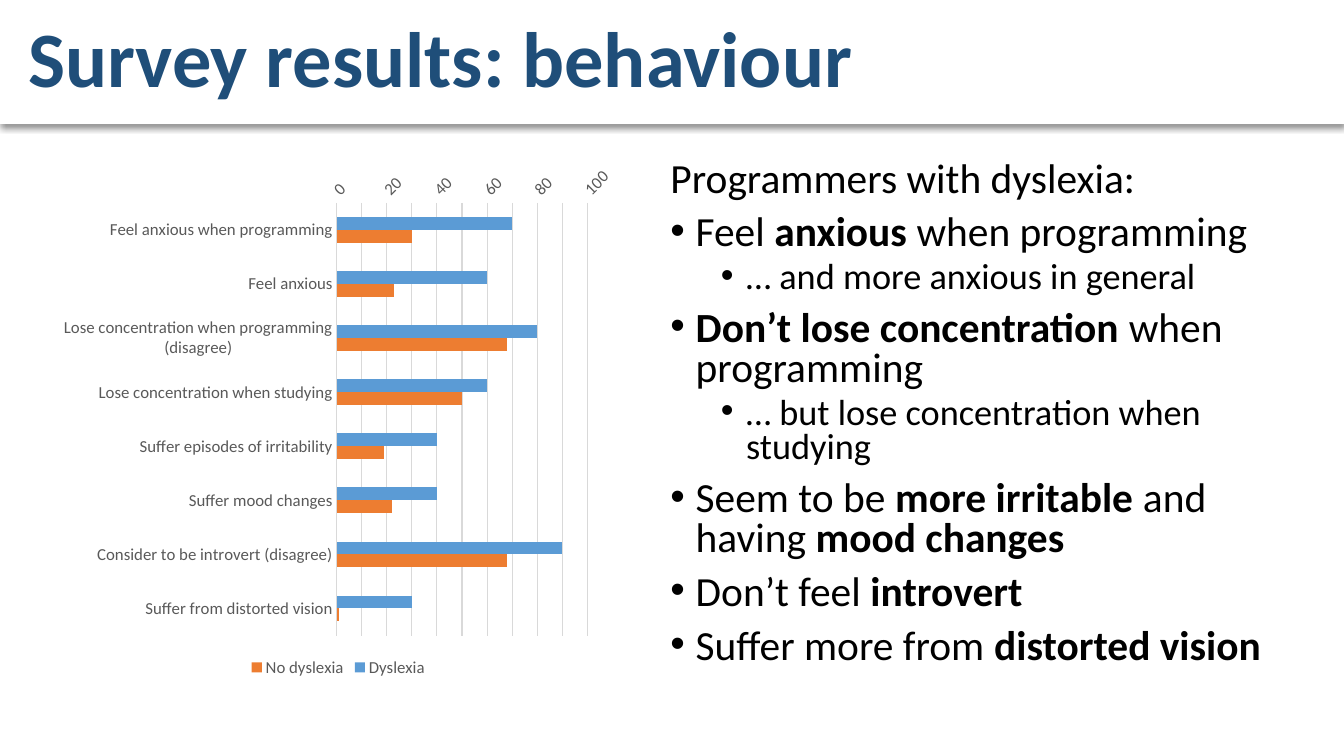
import pptx
import pptx.chart.data
import pptx.dml.color
import pptx.enum.chart
import pptx.enum.shapes
import pptx.enum.text
import pptx.oxml
import pptx.oxml.ns
import pptx.util
from lxml import etree

RGBColor = pptx.dml.color.RGBColor
Inches = pptx.util.Inches
Pt = pptx.util.Pt

WHITE = RGBColor(0xFF, 0xFF, 0xFF)
BLACK = RGBColor(0x00, 0x00, 0x00)
NAVY = RGBColor(0x1F, 0x4E, 0x79)
GREY = RGBColor(0x59, 0x59, 0x59)
PALE_GREY = RGBColor(0xD9, 0xD9, 0xD9)
BLUE = RGBColor(0x5B, 0x9B, 0xD5)
ORANGE = RGBColor(0xED, 0x7D, 0x31)

FONT = "Calibri"
SLIDE_WIDTH, SLIDE_HEIGHT = Inches(13.33), Inches(7.5)
BAND_HEIGHT = Inches(1.23)
CONTENT_TOP, CONTENT_HEIGHT = Inches(1.55), Inches(5.21)

CATEGORIES = [
    "Feel anxious when programming",
    "Feel anxious",
    "Lose concentration when programming (disagree)",
    "Lose concentration when studying",
    "Suffer episodes of irritability",
    "Suffer mood changes",
    "Consider to be introvert (disagree)",
    "Suffer from distorted vision",
]
SERIES = [
    ("Dyslexia", [70, 60, 80, 60, 40, 40, 90, 30], BLUE),
    ("No dyslexia", [30, 23, 68, 50, 19, 22, 68, 1], ORANGE),
]

LEAD, POINT, DETAIL = "lead", "point", "detail"
STYLES = {
    LEAD: (0, 0, 0, 29.6, 0),
    POINT: (0, 0.25, -0.25, 29.6, 10),
    DETAIL: (1, 0.75, -0.25, 25.9, 5),
}
FINDINGS = [
    (LEAD, [("Programmers with dyslexia:", False)]),
    (POINT, [("Feel ", False), ("anxious ", True), ("when programming", False)]),
    (DETAIL, [("… and more anxious in general", False)]),
    (POINT, [("Don’t lose concentration ", True), ("when programming", False)]),
    (DETAIL, [("… but lose concentration when studying", False)]),
    (POINT, [("Seem to be ", False), ("more irritable ", True),
             ("and having ", False), ("mood changes", True)]),
    (POINT, [("Don’t feel ", False), ("introvert", True)]),
    (POINT, [("Suffer more from ", False), ("distorted vision", True)]),
]


def place(shape, left, top, width, height):
    shape.left, shape.top, shape.width, shape.height = left, top, width, height


def style_font(font, size, color, bold=None):
    font.name = FONT
    font.size = Pt(size)
    font.color.rgb = color
    font.bold = bold


def add_title_band(slide):
    band = slide.shapes.add_shape(
        pptx.enum.shapes.MSO_SHAPE.RECTANGLE, 0, 0, SLIDE_WIDTH, BAND_HEIGHT)
    band.fill.solid()
    band.fill.fore_color.rgb = WHITE
    band.line.fill.background()
    band.shadow.inherit = False
    effects = band._element.spPr.find(pptx.oxml.ns.qn("a:effectLst"))
    effects.append(pptx.oxml.parse_xml(
        f'<a:outerShdw {pptx.oxml.ns.nsdecls("a")} blurRad="{Pt(4)}" '
        f'dist="{Pt(3)}" dir="5400000" algn="t" rotWithShape="0">'
        '<a:srgbClr val="000000"><a:alpha val="40000"/></a:srgbClr>'
        '</a:outerShdw>'))
    slide.shapes._spTree.insert(2, band._element)


def fill_title(title, text):
    place(title, Inches(0.18), 0, Inches(10.34), BAND_HEIGHT)
    frame = title.text_frame
    frame.text = text
    frame.vertical_anchor = pptx.enum.text.MSO_ANCHOR.MIDDLE
    frame.auto_size = pptx.enum.text.MSO_AUTO_SIZE.NONE
    paragraph = frame.paragraphs[0]
    paragraph.alignment = pptx.enum.text.PP_ALIGN.LEFT
    paragraph.line_spacing = 0.9
    style_font(paragraph.font, 56, NAVY, True)


def set_bullet(paragraph, margin, indent, bulleted):
    properties = paragraph._p.get_or_add_pPr()
    properties.set("marL", str(Inches(margin)))
    properties.set("indent", str(Inches(indent)))
    if bulleted:
        font = etree.SubElement(properties, pptx.oxml.ns.qn("a:buFont"))
        font.set("typeface", "Arial")
        bullet = etree.SubElement(properties, pptx.oxml.ns.qn("a:buChar"))
        bullet.set("char", "•")
    else:
        etree.SubElement(properties, pptx.oxml.ns.qn("a:buNone"))


def fill_findings(body):
    place(body, Inches(6.55), CONTENT_TOP, Inches(6.65), CONTENT_HEIGHT)
    frame = body.text_frame
    frame.auto_size = pptx.enum.text.MSO_AUTO_SIZE.NONE
    for index, (style, runs) in enumerate(FINDINGS):
        level, margin, indent, size, space_before = STYLES[style]
        paragraph = frame.add_paragraph() if index else frame.paragraphs[0]
        paragraph.level = level
        set_bullet(paragraph, margin, indent, style != LEAD)
        paragraph.line_spacing = 0.8
        paragraph.space_before = Pt(space_before)
        style_font(paragraph.font, size, BLACK)
        for text, bold in runs:
            run = paragraph.add_run()
            run.text = text
            if bold:
                run.font.bold = True


def add_survey_chart(slide):
    data = pptx.chart.data.CategoryChartData()
    data.categories = CATEGORIES
    for name, values, _ in SERIES:
        data.add_series(name, values)
    chart = slide.shapes.add_chart(
        pptx.enum.chart.XL_CHART_TYPE.BAR_CLUSTERED,
        Inches(0.52), CONTENT_TOP, Inches(5.67), CONTENT_HEIGHT, data).chart
    chart.has_title = False
    style_font(chart.font, 10, BLACK)

    plot = chart.plots[0]
    plot.gap_width = 219
    plot.overlap = 0
    plot.vary_by_categories = False
    for series, (_, _, color) in zip(plot.series, SERIES):
        series.format.fill.solid()
        series.format.fill.fore_color.rgb = color

    for axis in (chart.category_axis, chart.value_axis):
        axis.major_tick_mark = pptx.enum.chart.XL_TICK_MARK.NONE
        axis.minor_tick_mark = pptx.enum.chart.XL_TICK_MARK.NONE
        style_font(axis.tick_labels.font, 12, GREY)
    chart.category_axis.reverse_order = True
    chart.value_axis.format.line.fill.background()
    chart.value_axis.has_major_gridlines = True
    for line in (chart.category_axis.format.line,
                 chart.value_axis.major_gridlines.format.line):
        line.color.rgb = PALE_GREY
        line.width = Pt(0.75)

    chart.has_legend = True
    chart.legend.position = pptx.enum.chart.XL_LEGEND_POSITION.BOTTOM
    chart.legend.include_in_layout = False
    style_font(chart.legend.font, 12, GREY)


def main():
    presentation = pptx.Presentation()
    presentation.slide_width = SLIDE_WIDTH
    presentation.slide_height = SLIDE_HEIGHT
    slide = presentation.slides.add_slide(presentation.slide_layouts[1])
    add_title_band(slide)
    fill_title(slide.shapes.title, "Survey results: behaviour")
    fill_findings(slide.placeholders[1])
    add_survey_chart(slide)
    presentation.save("out.pptx")


if __name__ == "__main__":
    main()
